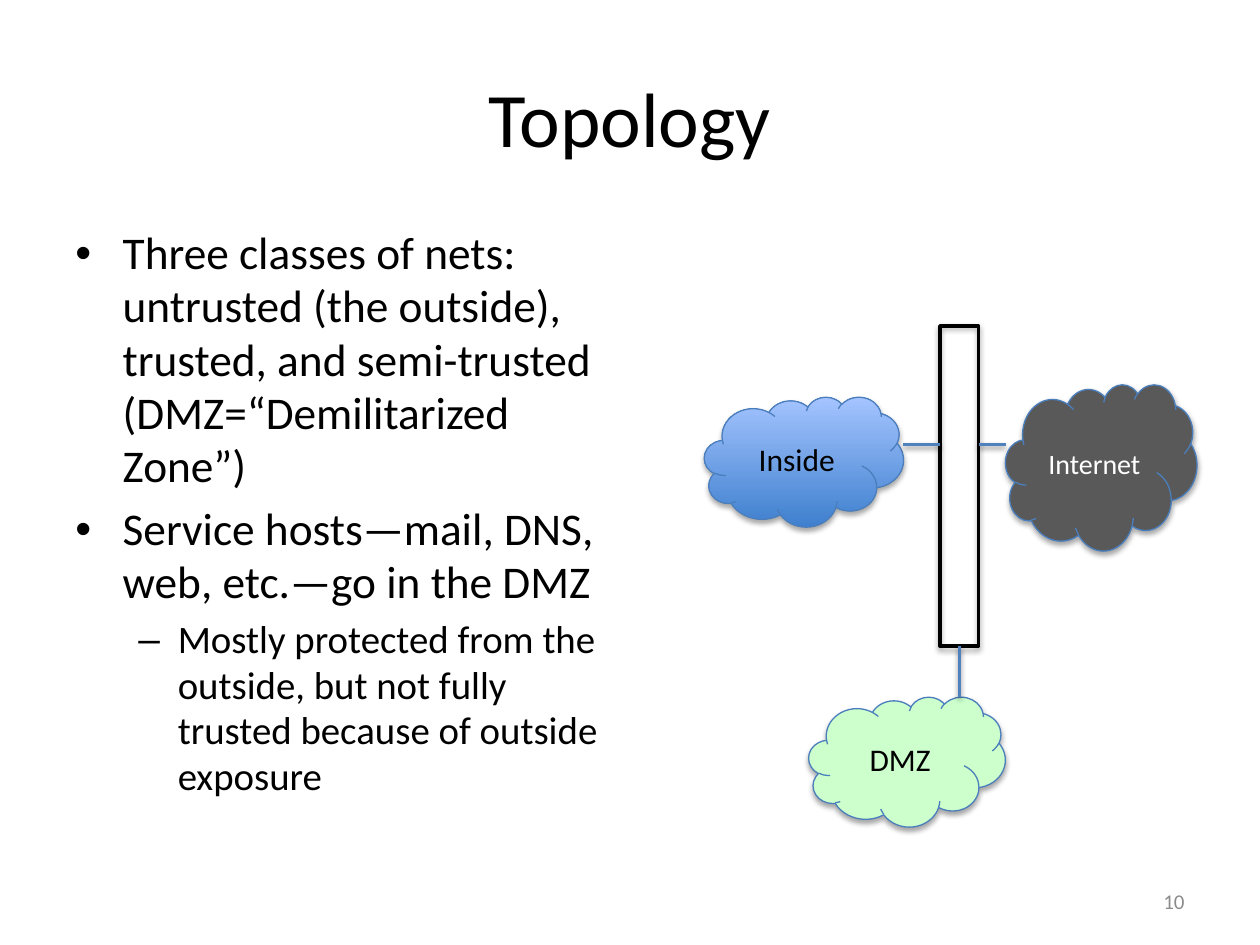
from dataclasses import dataclass

from lxml.etree import SubElement
from pptx import Presentation
from pptx.dml.color import RGBColor
from pptx.enum.shapes import MSO_CONNECTOR as Connector, MSO_SHAPE as Shape
from pptx.enum.text import MSO_ANCHOR as Anchor, PP_ALIGN as Align
from pptx.oxml.ns import qn
from pptx.util import Pt

FONT = "Calibri"
BLACK = "000000"
OUTLINE = "4B7EBC"
LINK = "4F81BD"


@dataclass
class Bullet:
    text: str
    level: int
    size: float
    mark: str
    margin: float
    hanging: float


@dataclass
class Cloud:
    text: str
    left: float
    top: float
    width: float
    height: float
    size: float
    ink: str
    fills: tuple[str, ...]


@dataclass
class Link:
    start: tuple[float, float]
    end: tuple[float, float]


BULLETS = [
    Bullet("Three classes of nets: untrusted (the outside), trusted, and "
           "semi-trusted (DMZ=“Demilitarized Zone”)", 0, 25.9, "•", 27, 27),
    Bullet("Service hosts—mail, DNS, web, etc.—go in the DMZ", 0, 25.9, "•", 27, 27),
    Bullet("Mostly protected from the outside, but not fully trusted because "
           "of outside exposure", 1, 22.2, "–", 58.5, 22.5),
]
CLOUDS = [
    Cloud("Inside", 402.5, 226.8, 113.8, 74.2, 18, BLACK, ("3F80CE", "A4C4FF")),
    Cloud("DMZ", 462.2, 398.2, 112.3, 74.2, 18, BLACK, ("CCFFCC",)),
    Cloud("Internet", 574.6, 219.6, 109.4, 95, 16, "FFFFFF", ("595959",)),
]
FIREWALL = (537.2, 186.3, 22, 183)
DMZ_LINK = Link((548.2, 369.3), (548.2, 398.2))
SIDE_LINKS = [
    Link((516.2, 254), (537.2, 254)),
    Link((574.6, 254), (559.2, 254)),
]


def color(value: str) -> RGBColor:
    return RGBColor.from_string(value)


def set_font(para, size: float, ink: str) -> None:
    para.font.name = FONT
    para.font.size = Pt(size)
    para.font.color.rgb = color(ink)


def set_line(item, ink: str, width: float) -> None:
    item.line.color.rgb = color(ink)
    item.line.width = Pt(width)


def add_shadow(effects, opacity: int, distance: float) -> None:
    shadow = SubElement(effects, qn("a:outerShdw"), blurRad=str(Pt(3.1)),
                        dist=str(Pt(distance)), dir="5400000", rotWithShape="0")
    tint = SubElement(shadow, qn("a:srgbClr"), val=BLACK)
    SubElement(tint, qn("a:alpha"), val=str(opacity * 1000))


def add_shape(page, kind, bounds: tuple[float, ...], ink: str, width: float):
    shape = page.shapes.add_shape(kind, *map(Pt, bounds))
    set_line(shape, ink, width)
    shape.shadow.inherit = False
    add_shadow(shape._element.spPr.find(qn("a:effectLst")), 35, 1.8)
    return shape


def add_cloud(page, cloud: Cloud) -> None:
    bounds = (cloud.left, cloud.top, cloud.width, cloud.height)
    shape = add_shape(page, Shape.CLOUD, bounds, OUTLINE, 0.75)
    if len(cloud.fills) > 1:
        shape.fill.gradient()
        shape.fill.gradient_angle = 90
        for position, (stop, value) in enumerate(zip(shape.fill.gradient_stops, cloud.fills)):
            stop.position = position
            stop.color.rgb = color(value)
    else:
        shape.fill.solid()
        shape.fill.fore_color.rgb = color(cloud.fills[0])
    frame = shape.text_frame
    frame.vertical_anchor = Anchor.MIDDLE
    para = frame.paragraphs[0]
    para.text = cloud.text
    para.alignment = Align.CENTER
    set_font(para, cloud.size, cloud.ink)


def add_link(page, link: Link):
    line = page.shapes.add_connector(Connector.STRAIGHT, *map(Pt, link.start + link.end))
    set_line(line, LINK, 2)
    add_shadow(SubElement(line._element.spPr, qn("a:effectLst")), 38, 1.6)
    return line


def add_frame(page, bounds: tuple[float, ...], anchor):
    frame = page.shapes.add_textbox(*map(Pt, bounds)).text_frame
    frame.word_wrap = True
    frame.vertical_anchor = anchor
    return frame


def add_label(page, text: str, bounds: tuple[float, ...], align, size: float, ink: str) -> None:
    para = add_frame(page, bounds, Anchor.MIDDLE).paragraphs[0]
    para.text = text
    para.alignment = align
    set_font(para, size, ink)


def add_bullets(page, bullets: list[Bullet], bounds: tuple[float, ...]) -> None:
    frame = add_frame(page, bounds, Anchor.TOP)
    for index, bullet in enumerate(bullets):
        para = frame.add_paragraph() if index else frame.paragraphs[0]
        para.text = bullet.text
        para.level = bullet.level
        para.space_before = Pt(round(bullet.size * 0.2, 1))
        para.line_spacing = 0.98
        set_font(para, bullet.size, BLACK)
        settings = para._p.get_or_add_pPr()
        settings.set("marL", str(Pt(bullet.margin)))
        settings.set("indent", str(-Pt(bullet.hanging)))
        mark_font = settings.makeelement(qn("a:buFont"), {"typeface": "Arial"})
        mark = settings.makeelement(qn("a:buChar"), {"char": bullet.mark})
        settings.find(qn("a:defRPr")).addprevious(mark_font)
        mark_font.addnext(mark)


def main() -> None:
    deck = Presentation()
    deck.slide_width, deck.slide_height = Pt(720), Pt(540)
    page = deck.slides.add_slide(deck.slide_layouts[6])

    add_label(page, "Topology", (36, 21.6, 648, 90), Align.CENTER, 44, BLACK)
    add_bullets(page, BULLETS, (36, 126, 330.5, 356.4))
    add_label(page, "10", (516, 500.5, 168, 28.75), Align.RIGHT, 12, "8C8C8C")

    for cloud in CLOUDS:
        add_cloud(page, cloud)
    firewall = add_shape(page, Shape.RECTANGLE, FIREWALL, BLACK, 2)
    firewall.fill.background()
    add_link(page, DMZ_LINK).begin_connect(firewall, 2)
    for link in SIDE_LINKS:
        add_link(page, link)

    deck.save("out.pptx")


if __name__ == "__main__":
    main()
